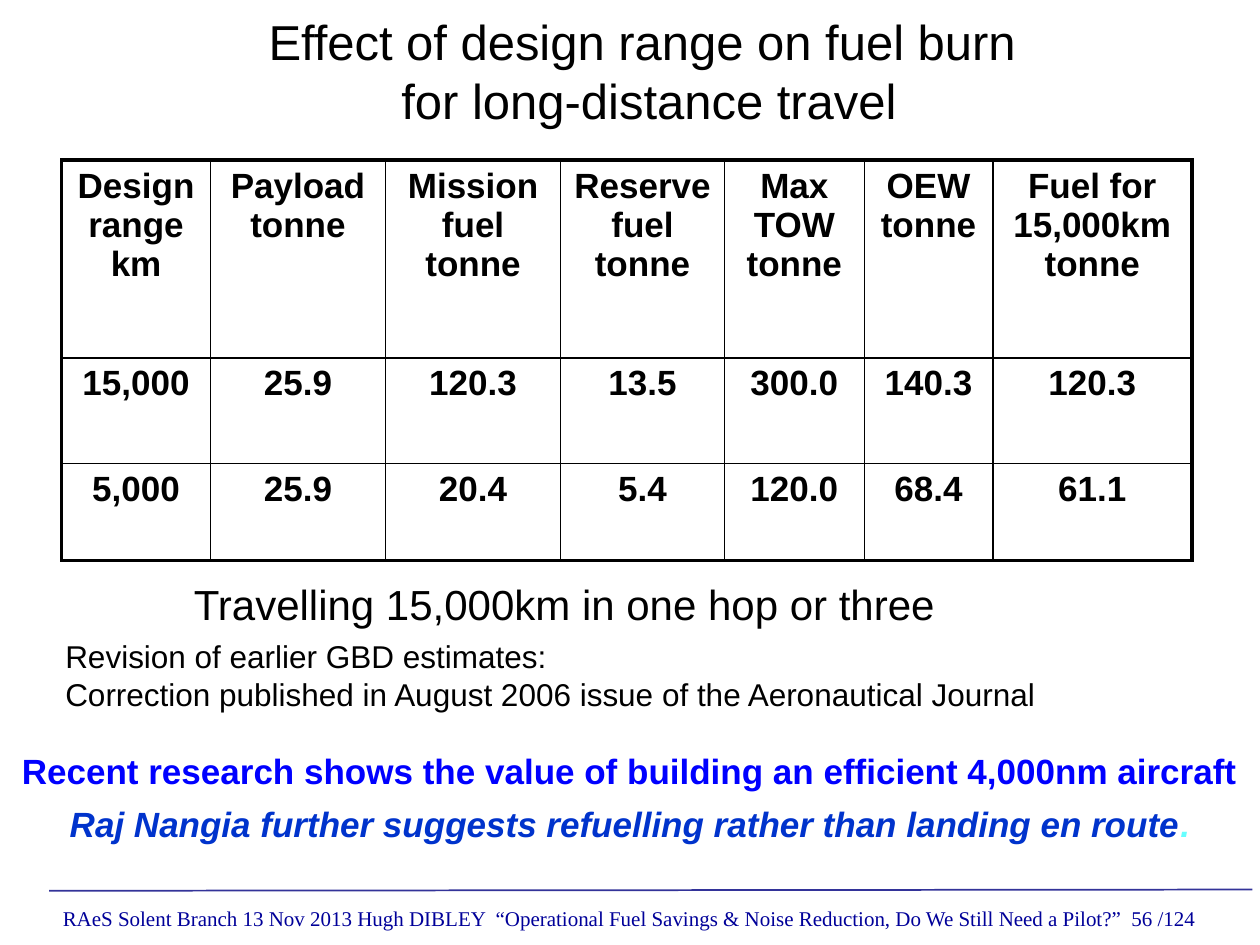
from lxml import etree
from pptx import Presentation
from pptx import util as u
from pptx.dml import color
from pptx.enum import shapes, text
from pptx.oxml import ns

MID = text.PP_ALIGN.CENTER
BLACK = "000000"


def paint(code):
    return color.RGBColor.from_string(code)


class Deck:
    def __init__(self):
        self.face = "Arial"
        self.prs = Presentation()
        self.prs.slide_width, self.prs.slide_height = u.Inches(10), u.Inches(7.5)
        self.slide = self.prs.slides.add_slide(self.prs.slide_layouts[5])

    def style(self, font, size, code=BLACK, bold=False, italic=False, face=None):
        font.name, font.size = face or self.face, u.Pt(size)
        font.bold, font.italic = bold, italic
        font.color.rgb = paint(code)

    def title(self, words, box, size):
        shape = self.slide.shapes.title
        shape.left, shape.top, shape.width, shape.height = map(u.Inches, box)
        frame = shape.text_frame
        frame.auto_size = text.MSO_AUTO_SIZE.NONE
        frame.vertical_anchor = text.MSO_ANCHOR.TOP
        para = frame.paragraphs[0]
        para.text = words
        para.alignment = MID
        self.style(para.font, size)

    def box(self, *place):
        frame = self.slide.shapes.add_textbox(*map(u.Inches, place)).text_frame
        frame.word_wrap = True
        return frame

    def para(self, frame, words, size, first=False, align=None, before=0,
             indent=0, **look):
        para = frame.paragraphs[0] if first else frame.add_paragraph()
        if indent:
            para._p.get_or_add_pPr().set("marL", str(u.Inches(indent)))
        para.text = words
        para.alignment = align
        if before:
            para.space_before = u.Pt(before)
        self.style(para.font, size, **look)
        return para

    def line(self, start, end, code, width):
        ends = map(u.Inches, (*start, *end))
        rule = self.slide.shapes.add_connector(shapes.MSO_CONNECTOR.STRAIGHT, *ends)
        rule.line.color.rgb, rule.line.width = paint(code), u.Pt(width)
        etree.SubElement(rule._element.spPr, ns.qn("a:effectLst"))

    def edge(self, cell, widths):
        props = cell._tc.get_or_add_tcPr()
        for spot, (side, width) in enumerate(zip("LRTB", widths)):
            line = etree.Element(ns.qn("a:ln" + side), w=str(u.Pt(width)))
            fill = etree.SubElement(line, ns.qn("a:solidFill"))
            etree.SubElement(fill, ns.qn("a:srgbClr"), val=BLACK)
            props.insert(spot, line)

    def table(self, data, left, top, cols, rows, size, thin, thick):
        place = map(u.Inches, (left, top, sum(cols), sum(rows)))
        grid = self.slide.shapes.add_table(len(rows), len(cols), *place).table
        grid.first_row = grid.horz_banding = False
        for col, width in zip(grid.columns, cols):
            col.width = u.Inches(width)
        for row, height in zip(grid.rows, rows):
            row.height = u.Inches(height)
        for r, line in enumerate(data):
            for c, words in enumerate(line):
                cell = grid.cell(r, c)
                cell.fill.background()
                self.para(cell.text_frame, words, size, first=True, align=MID, bold=True)
                outer = (c == 0, c == len(cols) - 1, r == 0, r == len(rows) - 1)
                self.edge(cell, [thick if out else thin for out in outer])


deck = Deck()

# Footer
deck.line((0.39, 7.07), (9.94, 7.06), "333399", 1)
deck.para(deck.box(0.4, 7.14, 9.6, 0.3),
          "RAeS Solent Branch 13 Nov 2013 Hugh DIBLEY  “Operational Fuel Savings "
          "& Noise Reduction, Do We Still Need a Pilot?”  56 /124",
          12, first=True, code="000099", face="Times New Roman")

# Title
deck.title("Effect of design range on fuel burn \vfor long-distance travel",
           (0.65, 0.04, 9, 1.25), 28)

# Fuel table
fuel = [
    ["Design range km", "Payload tonne", "Mission fuel tonne", "Reserve fuel tonne",
     "Max TOW tonne", "OEW tonne", "Fuel for 15,000km tonne"],
    ["15,000", "25.9", "120.3", "13.5", "300.0", "140.3", "120.3"],
    ["5,000", "25.9", "20.4", "5.4", "120.0", "68.4", "61.1"],
]
deck.table(fuel, 0.49, 1.27, [1.18, 1.39, 1.39, 1.3, 1.11, 1.02, 1.58],
           [1.57, 0.84, 0.77], 20, thin=1, thick=2.25)

# Caption
deck.para(deck.box(1.44, 4.54, 7.25, 0.5),
          "Travelling 15,000km in one hop or three", 24, first=True)

# Notes and conclusions
notes = deck.box(0, 5.01, 10, 1.77)
deck.para(notes, "Revision of earlier GBD estimates:", 18, first=True, indent=0.42)
deck.para(notes, "Correction published in August 2006 issue of the Aeronautical Journal",
          18, indent=0.42)
deck.para(notes, "Recent research shows the value of building an efficient 4,000nm aircraft",
          20, align=MID, before=21, code="0000FF", bold=True)
last = deck.para(notes, "Raj Nangia further suggests refuelling rather than landing en route",
                 20, align=MID, before=6, code="0033CC", bold=True, italic=True)
stop = last.add_run()
stop.text = "."
stop.font.color.rgb = paint("66FFFF")

deck.prs.save("out.pptx")
